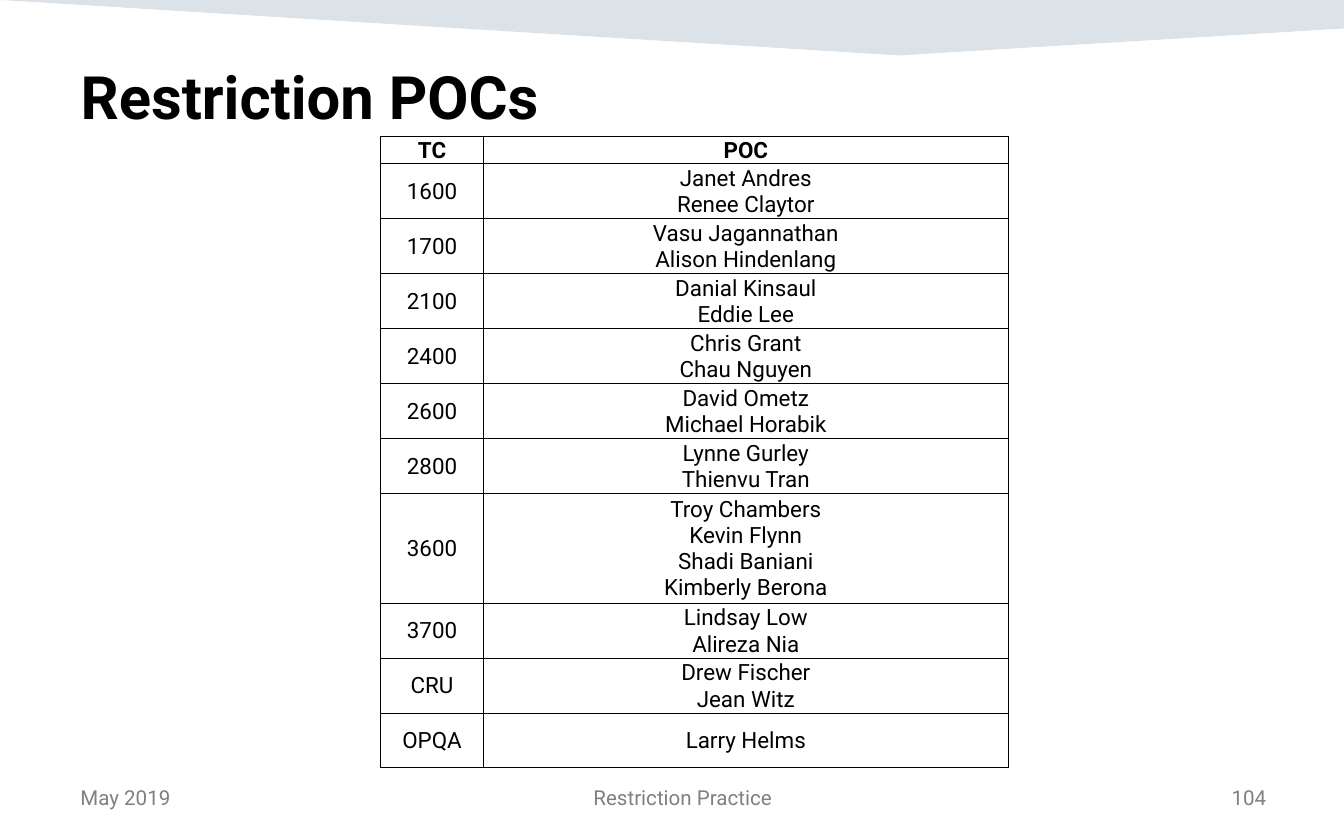
"""Build the Restriction POCs slide: a contact table with a title and a footer."""
from dataclasses import dataclass

from lxml.etree import SubElement
from pptx import Presentation
from pptx.dml.color import RGBColor as Rgb
from pptx.enum.text import MSO_ANCHOR as Anchor, PP_ALIGN as Align
from pptx.oxml.ns import qn
from pptx.util import Inches, Pt

GRID = 100
CONTACTS = [
    ("1600", ["Janet Andres", "Renee Claytor"]),
    ("1700", ["Vasu Jagannathan", "Alison Hindenlang"]),
    ("2100", ["Danial Kinsaul", "Eddie Lee"]),
    ("2400", ["Chris Grant", "Chau Nguyen"]),
    ("2600", ["David Ometz", "Michael Horabik"]),
    ("2800", ["Lynne Gurley", "Thienvu Tran"]),
    ("3600", ["Troy Chambers", "Kevin Flynn", "Shadi Baniani", "Kimberly Berona"]),
    ("3700", ["Lindsay Low", "Alireza Nia"]),
    ("CRU", ["Drew Fischer", "Jean Witz"]),
    ("OPQA", ["Larry Helms"]),
]


@dataclass(frozen=True)
class Theme:
    """Colours, font and type sizes of the slide."""
    font: str = "Roboto"
    ink: str = "000000"
    muted: str = "808080"
    band: str = "164469"
    band_alpha: int = 15
    title_size: int = 32
    table_size: int = 12
    footer_size: int = 11
    rule: float = 0.5


def assign(target, formats):
    """Set each attribute of the target from a dict."""
    for name, value in formats.items():
        setattr(target, name, value)


class SlideBuilder:
    """Hold the theme and the current slide, and add elements on a grid."""

    def __init__(self, deck, theme):
        """Start a title-only slide."""
        self.theme = theme
        self.column, self.row = deck.slide_width / GRID, deck.slide_height / GRID
        self.slide = deck.slides.add_slide(deck.slide_layouts[5])

    def box(self, left, top, width, height):
        """Turn grid columns and rows into lengths."""
        return (round(left * self.column), round(top * self.row),
                round(width * self.column), round(height * self.row))

    def fill_text(self, frame, text, size, color, align, bold=False):
        """Fill a text frame with paragraphs in one style."""
        frame.text = text
        for paragraph in frame.paragraphs:
            paragraph.alignment = align
            for run in paragraph.runs:
                assign(run.font, {"name": self.theme.font, "size": Pt(size), "bold": bold})
                run.font.color.rgb = Rgb.from_string(color)

    def band(self, corners):
        """Draw the translucent band along the top edge."""
        points = [self.box(x, y, 0, 0)[:2] for x, y in corners]
        outline = self.slide.shapes.build_freeform(*points[0])
        outline.add_line_segments(points[1:], close=True)
        band = outline.convert_to_shape()
        band.shadow.inherit = False
        band.line.fill.background()
        band.fill.solid()
        band.fill.fore_color.rgb = Rgb.from_string(self.theme.band)
        tint = next(band._element.iter(qn("a:srgbClr")))
        SubElement(tint, qn("a:alpha"), val=str(self.theme.band_alpha * 1000))

    def title(self, text, *place):
        """Move and format the title placeholder."""
        title = self.slide.shapes.title
        assign(title, dict(zip(("left", "top", "width", "height"), self.box(*place))))
        self.fill_text(title.text_frame, text, self.theme.title_size, self.theme.ink,
                       Align.LEFT, True)
        title.text_frame.vertical_anchor = Anchor.MIDDLE

    def footer(self, text, align, *place):
        """Add one part of the footer."""
        frame = self.slide.shapes.add_textbox(*self.box(*place)).text_frame
        frame.word_wrap = True
        self.fill_text(frame, text, self.theme.footer_size, self.theme.muted, align)

    def cell(self, cell, text, header):
        """Format a table cell with thin rules and no fill."""
        inset = Inches(0.01)
        assign(cell, {"margin_left": inset, "margin_right": inset, "margin_top": inset,
                      "margin_bottom": 0,
                      "vertical_anchor": Anchor.BOTTOM if header else Anchor.MIDDLE})
        self.fill_text(cell.text_frame, text, self.theme.table_size, self.theme.ink,
                       Align.CENTER, header)
        properties = cell._tc.get_or_add_tcPr()
        for side in ("lnL", "lnR", "lnT", "lnB"):
            rule = SubElement(properties, qn(f"a:{side}"), w=str(Pt(self.theme.rule)))
            SubElement(SubElement(rule, qn("a:solidFill")), qn("a:srgbClr"), val=self.theme.ink)
        cell.fill.background()

    def contact_table(self, contacts, widths, left, top, height):
        """Add the table, with row heights in proportion to their lines."""
        entries = [("TC", ["POC"]), *contacts]
        lines = [1] + [max(2, len(names)) for _, names in contacts]
        table = self.slide.shapes.add_table(
            len(entries), len(widths), *self.box(left, top, sum(widths), height)).table
        assign(table, {"first_row": False, "horz_banding": False})
        for column, width in zip(table.columns, widths):
            column.width = round(width * self.column)
        for index, (center, names) in enumerate(entries):
            table.rows[index].height = round(height * self.row * lines[index] / sum(lines))
            for cell, text in zip(table.rows[index].cells, (center, "\n".join(names))):
                self.cell(cell, text, index == 0)


def main():
    """Build and save the slide."""
    deck = Presentation()
    assign(deck, {"slide_width": Inches(10), "slide_height": Inches(6.25)})
    builder = SlideBuilder(deck, Theme())
    builder.band([(0, 0), (100, 0), (100, 3.4), (66.9, 6.6)])
    builder.title("Restriction POCs", 5, 6.56, 90, 9.6)
    builder.contact_table(CONTACTS, (7.7, 39), 28.3, 16.2, 75.2)
    for text, align, left, width in (
            ("May 2019", Align.LEFT, 5, 15),
            ("Restriction Practice", Align.CENTER, 20.7, 60.2),
            ("104", Align.RIGHT, 81.7, 13.5)):
        builder.footer(text, align, left, 92.64, width, 5.3)
    deck.save("out.pptx")


if __name__ == "__main__":
    main()
